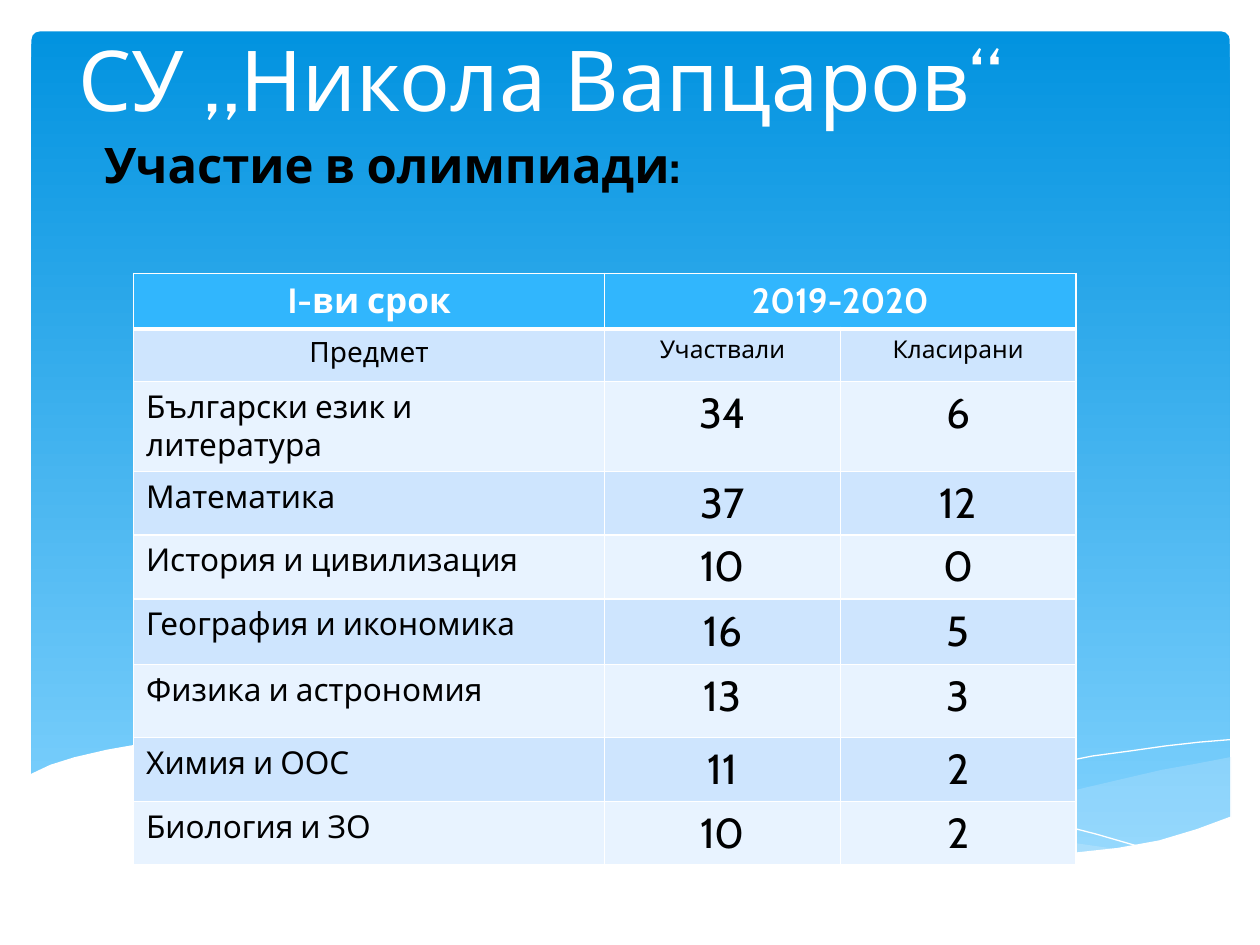
from lxml import etree
from pptx import Presentation
from pptx.dml.color import RGBColor
from pptx.enum.shapes import MSO_SHAPE
from pptx.enum.text import MSO_ANCHOR, MSO_AUTO_SIZE, PP_ALIGN
from pptx.oxml.ns import qn
from pptx.util import Pt

ROUND_RECT = MSO_SHAPE.ROUNDED_RECTANGLE
TOP, BOTTOM = MSO_ANCHOR.TOP, MSO_ANCHOR.BOTTOM
NO_FIT = MSO_AUTO_SIZE.NONE
LEFT, CENTER = PP_ALIGN.LEFT, PP_ALIGN.CENTER

PX = 9144  # 100 px to the inch
FONT = "Cabin"
COLORS = {
    "white": "FFFFFF", "black": "000000", "sky_top": "0293E0", "sky_low": "83D3FE",
    "wave": "C6E7FC", "header": "31B6FD", "band": "CEE5FE", "pale": "E8F3FF",
}

# Wave outlines, in px
WAVE_RIGHT = [
    (976, 601), (950, 606), (922, 611), (892, 618), (862, 625), (806, 639), (754, 650),
    (707, 659), (662, 667), (692, 671), (719, 674), (746, 677), (782, 679), (815, 680),
    (845, 679), (873, 676), (898, 672), (922, 667), (944, 661), (964, 654), (977, 649),
    (977, 601)]
WAVE_LONG = [
    (894, 675), (838, 667), (776, 656), (707, 642), (630, 624), (584, 613), (542, 604),
    (502, 598), (465, 593), (420, 589), (380, 587), (345, 588), (314, 590), (287, 593),
    (323, 598), (363, 604), (405, 613), (450, 624), (530, 642), (602, 657), (666, 668),
    (723, 676), (774, 679), (819, 680), (859, 679)]
LINE_LONG = [
    (310, 597), (329, 594), (353, 591), (388, 589), (433, 589), (469, 590), (511, 594),
    (557, 598), (609, 606), (666, 615), (728, 628), (796, 643), (870, 662), (908, 673)]
LINE_RIGHT = [
    (614, 659), (653, 648), (696, 637), (749, 625), (807, 612), (867, 600), (897, 596),
    (925, 592), (952, 589), (976, 587)]
GROUND = [
    (977, 648), (950, 658), (920, 667), (887, 673), (850, 677), (809, 679), (761, 677),
    (708, 672), (648, 664), (579, 651), (503, 635), (447, 622), (391, 609), (340, 599),
    (292, 592), (250, 588), (211, 586), (161, 586), (119, 589), (85, 595), (59, 601),
    (40, 607), (23, 615), (23, 731), (977, 731)]

# Table
COLUMNS = [374, 187, 187]
ROW_HEIGHTS = [44, 42, 71, 50, 51, 52, 58, 50, 50]
HEADER = ["I-ви срок", "2019-2020"]
SUBHEADER = ["Предмет", "Участвали", "Класирани"]
RESULTS = [
    ["Български език и литература", "34", "6"],
    ["Математика", "37", "12"],
    ["История и цивилизация", "10", "0"],
    ["География и икономика", "16", "5"],
    ["Физика и астрономия", "13", "3"],
    ["Химия и ООС", "11", "2"],
    ["Биология и ЗО", "10", "2"],
]


def rgb(name):
    return RGBColor.from_string(COLORS[name])


class Deck:
    """Holds the style and the current slide."""

    def __init__(self):
        self.prs = Presentation()
        self.prs.slide_width, self.prs.slide_height = 1000 * PX, 750 * PX
        self.s = self.prs.slides.add_slide(self.prs.slide_layouts[0])

    def style(self, p, size, color, align=CENTER, bold=False):
        p.alignment = align
        for r in p.runs:
            r.font.name, r.font.size, r.font.bold = FONT, Pt(size), bold
            r.font.color.rgb = rgb(color)

    def panel(self, x, y, w, h):
        sp = self.s.shapes.add_shape(ROUND_RECT, x * PX, y * PX, w * PX, h * PX)
        sp.shadow.inherit = False
        sp.adjustments[0] = 0.01
        sp.line.fill.background()
        sp.fill.gradient()
        sp.fill.gradient_angle = 270
        for stop, name in zip(sp.fill.gradient_stops, ("sky_top", "sky_low")):
            stop.color.rgb = rgb(name)

    def outline(self, points, closed):
        fb = self.s.shapes.build_freeform(*points[0], scale=PX)
        fb.add_line_segments(points[1:], close=closed)
        sp = fb.convert_to_shape()
        sp.shadow.inherit = False
        return sp

    def area(self, points, color, opacity=100):
        sp = self.outline(points, True)
        sp.line.fill.background()
        sp.fill.solid()
        sp.fill.fore_color.rgb = rgb(color)
        if opacity < 100:
            clr = sp.fill._xPr.find(".//" + qn("a:srgbClr"))
            etree.SubElement(clr, qn("a:alpha"), val=str(opacity * 1000))

    def curve(self, points):
        sp = self.outline(points, False)
        sp.fill.background()
        sp.line.color.rgb = rgb("white")
        sp.line.width = Pt(0)

    def placeholder(self, idx, text, box, size, color, anchor, bold=False):
        sp = self.s.placeholders[idx]
        sp.left, sp.top, sp.width, sp.height = (v * PX for v in box)
        sp._element.getparent().append(sp._element)  # bring to front
        tf = sp.text_frame
        tf.text = text
        tf.word_wrap, tf.auto_size, tf.vertical_anchor = True, NO_FIT, anchor
        tf.paragraphs[0].space_before = Pt(0)
        self.style(tf.paragraphs[0], size, color, bold=bold)
        return tf

    def borders(self, cell, top=1, bottom=1):
        tcPr = cell._tc.get_or_add_tcPr()
        for side, width in (("L", 1), ("R", 1), ("T", top), ("B", bottom)):
            ln = etree.SubElement(tcPr, qn("a:ln" + side), w=str(Pt(width)))
            fill = etree.SubElement(ln, qn("a:solidFill"))
            etree.SubElement(fill, qn("a:srgbClr"), val=COLORS["white"])

    def table(self, x, y):
        rows = [HEADER + [""], SUBHEADER] + RESULTS
        tbl = self.s.shapes.add_table(
            len(rows), len(COLUMNS), x * PX, y * PX,
            sum(COLUMNS) * PX, sum(ROW_HEIGHTS) * PX).table
        for col, w in zip(tbl.columns, COLUMNS):
            col.width = w * PX
        for row, h in zip(tbl.rows, ROW_HEIGHTS):
            row.height = h * PX
        tbl.cell(0, 1).merge(tbl.cell(0, 2))
        for i, values in enumerate(rows):
            for j, text in enumerate(values):
                cell = tbl.cell(i, j)
                self.borders(cell, 3 if i == 1 else 1, 3 if i == 0 else 1)
                cell.fill.solid()
                band = "band" if i % 2 else "pale"
                cell.fill.fore_color.rgb = rgb(band if i else "header")
                cell.text = text
                p = cell.text_frame.paragraphs[0]
                if i == 0:
                    self.style(p, 20, "white", bold=True)
                elif i == 1:
                    self.style(p, 14 if j else 16, "black")
                else:
                    self.style(p, 24 if j else 18, "black", CENTER if j else LEFT)


def main():
    deck = Deck()
    # Background panel and waves
    deck.panel(25, 25, 951, 660)
    deck.area(WAVE_RIGHT, "wave", 29)
    deck.area(WAVE_LONG, "wave", 40)
    deck.curve(LINE_LONG)
    deck.curve(LINE_RIGHT)
    deck.area(GROUND, "white")
    # Title and subtitle
    deck.placeholder(0, "СУ „Никола Вапцаров“", (12, 13, 835, 94), 48, "white", BOTTOM)
    tf = deck.placeholder(1, "Участие в олимпиади:", (-137, 107, 899, 264), 28,
                          "black", TOP, bold=True)
    tf.margin_left = tf.margin_top = tf.margin_bottom = 0
    tf.margin_right = 2 * PX
    # Results table
    deck.table(106, 217)
    deck.prs.save("out.pptx")


if __name__ == "__main__":
    main()
